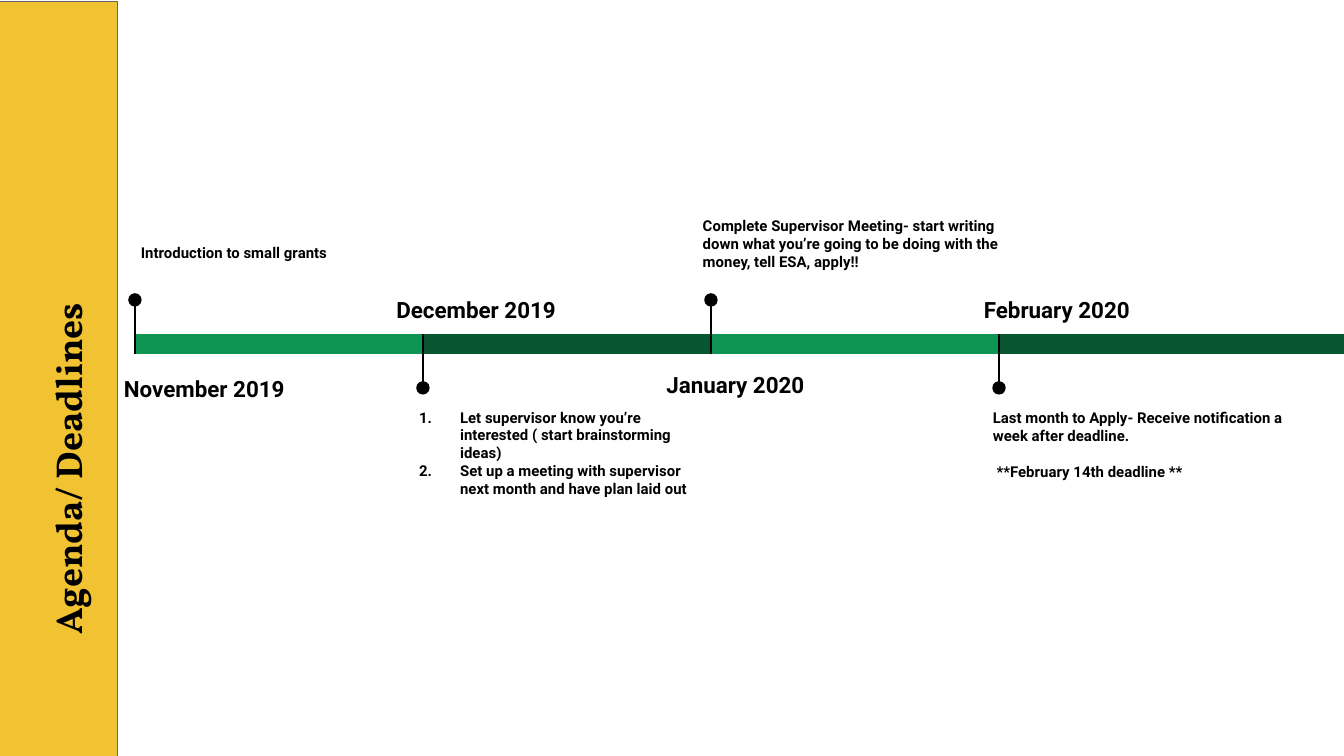
import pptx
import pptx.util
import pptx.dml.color
import pptx.enum.shapes
import pptx.enum.text
import pptx.oxml.ns
import lxml.etree

Pt = pptx.util.Pt
RGBColor = pptx.dml.color.RGBColor
Shape = pptx.enum.shapes.MSO_SHAPE
Align = pptx.enum.text.PP_ALIGN
Anchor = pptx.enum.text.MSO_ANCHOR
qn = pptx.oxml.ns.qn

BLACK = RGBColor(0x00, 0x00, 0x00)
GOLD = RGBColor(0xF1, 0xC2, 0x32)
GRAY = RGBColor(0x66, 0x66, 0x66)
LIGHT = RGBColor(0x0E, 0x94, 0x53)
DARK = RGBColor(0x08, 0x56, 0x31)

LEFT, STEP, WIDTH = 72.3, 154.3, 720
BAR_TOP, BAR_HIGH = 179, 10.6
DOT = 7.2


class Board:
    face = "Roboto"
    inset = 7.2

    def __init__(self, slide):
        self.slide = slide

    def shape(self, kind, x, y, w, h, fill, edge=None):
        item = self.slide.shapes.add_shape(kind, Pt(x), Pt(y), Pt(w), Pt(h))
        item.shadow.inherit = False
        item.fill.solid()
        item.fill.fore_color.rgb = fill
        if edge is None:
            item.line.fill.background()
        else:
            item.line.color.rgb = edge
            item.line.width = Pt(0.75)

    def line(self, x, top, end):
        item = self.slide.shapes.add_connector(
            pptx.enum.shapes.MSO_CONNECTOR.STRAIGHT, Pt(x), Pt(top), Pt(x), Pt(end))
        item.line.color.rgb = BLACK
        item.line.width = Pt(0.75)
        lxml.etree.SubElement(item._element.spPr, qn("a:effectLst"))

    def frame(self, box, anchor):
        frame = box.text_frame
        frame.word_wrap = True
        frame.auto_size = pptx.enum.text.MSO_AUTO_SIZE.NONE
        frame.vertical_anchor = anchor
        frame.margin_left = frame.margin_right = Pt(self.inset)
        frame.margin_top = frame.margin_bottom = Pt(self.inset)
        return frame

    def font(self, para, face, size):
        para.font.name = face
        para.font.size = Pt(size)
        para.font.bold = True
        para.font.color.rgb = BLACK

    def title(self, text, x, y, w, h):
        box = self.slide.shapes.title
        box.left, box.top, box.width, box.height = Pt(x), Pt(y), Pt(w), Pt(h)
        box.rotation = 270
        para = self.frame(box, Anchor.MIDDLE).paragraphs[0]
        para.text = text
        para.alignment = Align.LEFT
        self.font(para, "Vollkorn", 20)
        self.slide.shapes._spTree.append(box._element)

    def text(self, lines, x, y, w, h, size):
        box = self.slide.shapes.add_textbox(Pt(x), Pt(y), Pt(w), Pt(h))
        frame = self.frame(box, Anchor.TOP)
        for i, line in enumerate(lines):
            para = frame.paragraphs[0] if i == 0 else frame.add_paragraph()
            para.text = line
            self.font(para, self.face, size)
        return frame.paragraphs

    def month(self, text, x, y, w):
        para = self.text([text], x, y, w, 29.5, 12)[0]
        para.alignment = Align.CENTER
        para.line_spacing = 1.15
        para.space_after = Pt(16)

    def note(self, lines, x, y, listed=False, gap=0):
        paras = self.text(lines, x, y, 177.1, 74.2, 8)
        for para in paras[1:]:
            para.space_before = Pt(gap)
        if listed:
            for para in paras:
                props = para._p.get_or_add_pPr()
                props.set("marL", str(Pt(36)))
                props.set("indent", str(-Pt(22)))
                lxml.etree.SubElement(props, qn("a:buAutoNum"), type="arabicPeriod")

    def mark(self, x, above):
        bottom = BAR_TOP + BAR_HIGH
        start, end = (161, bottom) if above else (BAR_TOP, 207.4)
        self.line(x, start, end)
        top = 157.1 if above else 204.2
        self.shape(Shape.OVAL, x - DOT / 2, top, DOT, DOT, BLACK)


def main():
    deck = pptx.Presentation()
    deck.slide_width, deck.slide_height = Pt(WIDTH), Pt(405)
    board = Board(deck.slides.add_slide(deck.slide_layouts[5]))
    board.shape(Shape.RECTANGLE, -1, 0.8, 63.8, 410.4, GOLD, GRAY)
    board.title("Agenda/ Deadlines", -116.6, 177.2, 305.3, 34.6)

    stages = [
        (("November 2019", 50.1, 191.7, 118.8),
         (["Introduction to small grants"], 68.4, 123.5)),
        (("December 2019", 192.1, 149.2, 126),
         (["Let supervisor know you’re interested ( start brainstorming ideas)",
           "Set up a meeting with supervisor next month and have plan laid out"],
          203.4, 211.5, True)),
        (("January 2020", 343.6, 189.5, 100.8),
         (["Complete Supervisor Meeting- start writing down what you’re going "
           "to be doing with the money, tell ESA, apply!!"], 369.4, 109.1)),
        (("February 2020", 505.7, 149.2, 121),
         (["Last month to Apply- Receive notification a week after deadline.",
           " **February 14th deadline **"], 524.8, 211.8, False, 9.5)),
    ]
    for i, (month, note) in enumerate(stages):
        x = LEFT + i * STEP
        above = i % 2 == 0
        wide = WIDTH - x if i == len(stages) - 1 else STEP
        board.shape(Shape.RECTANGLE, x, BAR_TOP, wide, BAR_HIGH, LIGHT if above else DARK)
        board.month(*month)
        board.note(*note)
    for i in range(len(stages)):
        board.mark(LEFT + i * STEP, i % 2 == 0)
    deck.save("out.pptx")


if __name__ == "__main__":
    main()
